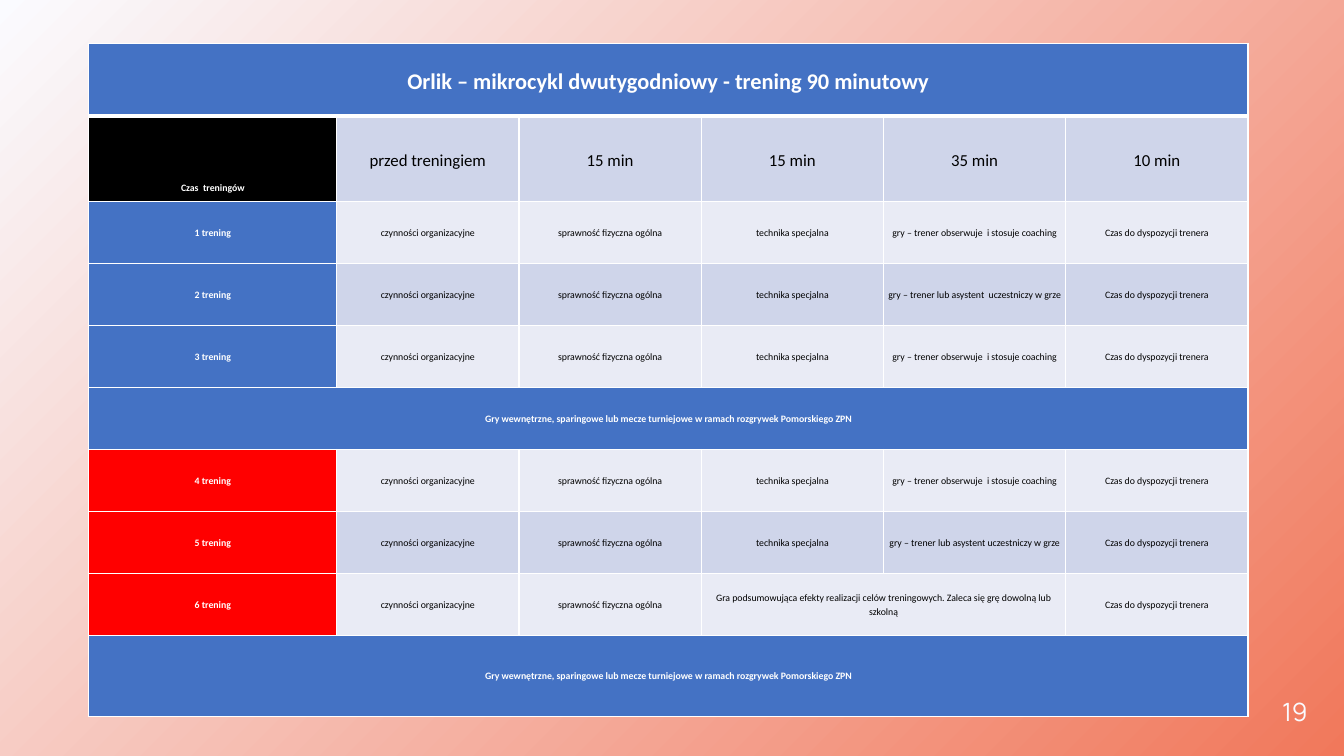
from lxml import etree
from pptx import Presentation
from pptx.dml.color import RGBColor
from pptx.enum import text
from pptx.oxml import ns
from pptx.util import Pt

# Content: each row is (height, row fill, first-cell fill, cell texts)
BLUE = RGBColor(0x44, 0x72, 0xC4)
RED = RGBColor(0xFF, 0x00, 0x00)
BLACK = RGBColor(0x00, 0x00, 0x00)
WHITE = RGBColor(0xFF, 0xFF, 0xFF)
BAND_DARK = RGBColor(0xCF, 0xD5, 0xEA)
BAND_LIGHT = RGBColor(0xE9, 0xEB, 0xF5)
PALE = RGBColor(0xFA, 0xFB, 0xFF)
CORAL = RGBColor(0xF1, 0x78, 0x5B)

TITLE = "Orlik – mikrocykl dwutygodniowy - trening 90 minutowy"
MATCHES = "Gry wewnętrzne, sparingowe lub mecze turniejowe w ramach rozgrywek Pomorskiego ZPN"
SUMMARY = ("Gra podsumowująca efekty realizacji celów treningowych. "
           "Zaleca się grę dowolną lub szkolną")
START = ["czynności organizacyjne", "sprawność fizyczna ogólna"]
TECHNIQUE = "technika specjalna"
COACHING = "gry – trener obserwuje  i stosuje coaching"
END = "Czas do dyspozycji trenera"

# None continues the cell on its left
REST = [None] * 5
ROWS = [
    (52, BLUE, BLUE, [TITLE] + REST),
    (61, BAND_DARK, BLACK,
     ["Czas  treningów", "przed treningiem", "15 min", "15 min", "35 min", "10 min"]),
    (44.3, BAND_LIGHT, BLUE, ["1 trening", *START, TECHNIQUE, COACHING, END]),
    (44.3, BAND_DARK, BLUE, ["2 trening", *START, TECHNIQUE,
                             "gry – trener lub asystent  uczestniczy w grze", END]),
    (44.3, BAND_LIGHT, BLUE, ["3 trening", *START, TECHNIQUE, COACHING, END]),
    (44.3, BLUE, BLUE, [MATCHES] + REST),
    (44.3, BAND_LIGHT, RED, ["4 trening", *START, TECHNIQUE, COACHING, END]),
    (44.3, BAND_DARK, RED, ["5 trening", *START, TECHNIQUE,
                            "gry – trener lub asystent uczestniczy w grze", END]),
    (44.3, BAND_LIGHT, RED, ["6 trening", *START, SUMMARY, None, END]),
    (57.6, BLUE, BLUE, [MATCHES] + REST),
]
COLUMNS = [177] + [130.2] * 5
TABLE_LEFT, TABLE_TOP = 63.5, 31


def set_borders(cell, widths):
    """Draw white borders; widths maps a side letter to points."""
    properties = cell._tc.get_or_add_tcPr()
    for side, width in widths.items():
        line = etree.SubElement(properties, ns.qn(f"a:ln{side}"), w=str(Pt(width)))
        fill = etree.SubElement(line, ns.qn("a:solidFill"))
        etree.SubElement(fill, ns.qn("a:srgbClr"), val=str(WHITE))


def set_text(cell, words, size, color, bold):
    cell.text = words
    paragraph = cell.text_frame.paragraphs[0]
    paragraph.alignment = text.PP_ALIGN.CENTER
    paragraph.line_spacing = 1.15
    paragraph.space_after = Pt(10)
    font = paragraph.font
    font.name, font.size, font.bold = "Calibri", Pt(size), bold
    font.color.rgb = color


presentation = Presentation()
presentation.slide_width, presentation.slide_height = Pt(960), Pt(540)
slide = presentation.slides.add_slide(presentation.slide_layouts[6])

# Diagonal background gradient
background = slide.background.fill
background.gradient()
background.gradient_angle = 315
for stop, position, color in zip(background.gradient_stops, (0, 1), (PALE, CORAL)):
    stop.position = position
    stop.color.rgb = color

# Slide number
number_box = slide.shapes.add_textbox(Pt(891.5), Pt(497.5), Pt(42.5), Pt(21.6))
frame = number_box.text_frame
frame.word_wrap = True
frame.margin_left = frame.margin_top = frame.margin_right = frame.margin_bottom = 0
frame.text = "19"
number = frame.paragraphs[0]
number.alignment = text.PP_ALIGN.RIGHT
number.font.name, number.font.size = "Manrope", Pt(18)
number.font.color.rgb = PALE

# Training table
table = slide.shapes.add_table(
    len(ROWS), len(COLUMNS), Pt(TABLE_LEFT), Pt(TABLE_TOP),
    Pt(sum(COLUMNS)), Pt(sum(row[0] for row in ROWS))).table
table.first_row = table.horz_banding = False
for column, width in zip(table.columns, COLUMNS):
    column.width = Pt(width)

for r, (height, row_fill, first_fill, texts) in enumerate(ROWS):
    table.rows[r].height = Pt(height)
    for c, words in enumerate(texts):
        cell = table.cell(r, c)
        set_borders(cell, {"L": 1, "R": 1, "T": 3 if r == 1 else 1, "B": 3 if r == 0 else 1})
        cell.fill.solid()
        cell.fill.fore_color.rgb = first_fill if c == 0 else row_fill
        cell.margin_left = cell.margin_right = Pt(3)
        cell.margin_top = cell.margin_bottom = 0
        cell.vertical_anchor = text.MSO_ANCHOR.MIDDLE
        if words is None:
            continue
        size = 16 if r == 0 else 12 if r == 1 and c > 0 else 7
        set_text(cell, words, size, WHITE if c == 0 else BLACK, c == 0)
        last = c
        while last + 1 < len(texts) and texts[last + 1] is None:
            last += 1
        if last > c:
            cell.merge(table.cell(r, last))

# The corner label sits near the bottom of its cell
corner = table.cell(1, 0)
corner.vertical_anchor = text.MSO_ANCHOR.BOTTOM
corner.margin_bottom = Pt(5)

presentation.save("out.pptx")
